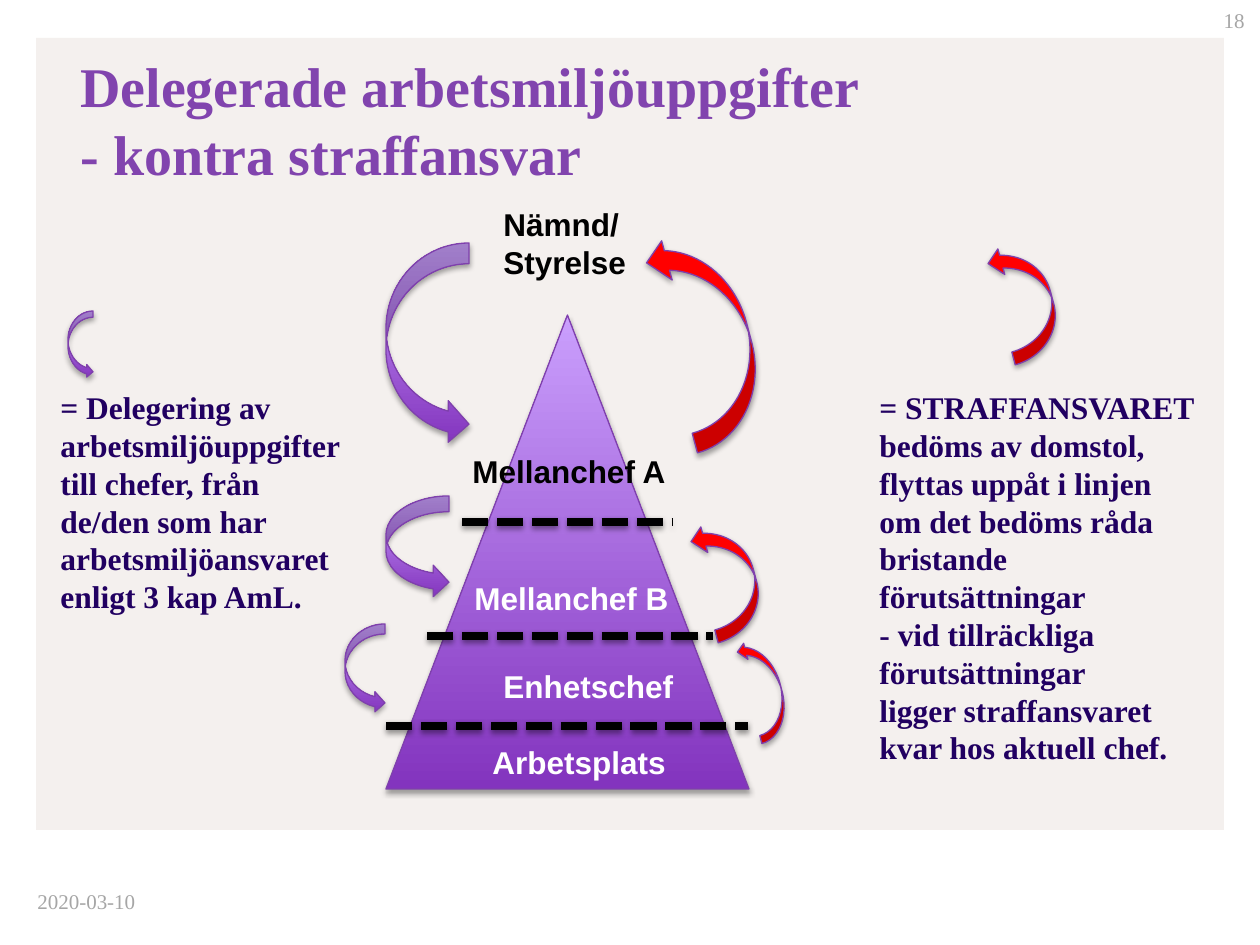
"""Build the slide on delegated work-environment tasks and criminal liability."""
from lxml.etree import SubElement
from pptx import Presentation
from pptx.dml.color import RGBColor
from pptx.enum.dml import MSO_LINE
from pptx.enum.shapes import MSO_CONNECTOR, MSO_SHAPE
from pptx.enum.text import MSO_ANCHOR, PP_ALIGN
from pptx.oxml.ns import qn
from pptx.util import Pt

SCALE = 914400 / 126
BLACK = RGBColor(0, 0, 0)
WHITE = RGBColor(255, 255, 255)
PANEL = RGBColor(0xF4, 0xF0, 0xEE)
TITLE = RGBColor(0x81, 0x44, 0xAE)
BODY = RGBColor(0x21, 0x00, 0x61)
GREY = RGBColor(0xA6, 0xA6, 0xA6)
EDGE = RGBColor(0x7F, 0x40, 0xAD)
DARK = RGBColor(0x83, 0x34, 0xBE)
LIGHT = RGBColor(0xCA, 0x9F, 0xFD)
RED = RGBColor(255, 0, 0)
SERIF, SANS = "Times New Roman", "Arial"


def px(*nums):
    return [round(num * SCALE) for num in nums]


def shade(item, alpha, dist):
    effects = SubElement(item._element.spPr, qn("a:effectLst"))
    shadow = SubElement(effects, qn("a:outerShdw"), blurRad=str(Pt(3.1)),
                        dist=str(Pt(dist)), dir="5400000", rotWithShape="0")
    color = SubElement(shadow, qn("a:srgbClr"), val="000000")
    SubElement(color, qn("a:alpha"), val=str(alpha * 1000))


deck = Presentation()
deck.slide_width, deck.slide_height = px(1260, 945)
slide = deck.slides.add_slide(deck.slide_layouts[6])
shapes = slide.shapes

panel = shapes.add_shape(MSO_SHAPE.RECTANGLE, *px(36, 38, 1188, 792))
panel.shadow.inherit = False
panel.fill.solid()
panel.fill.fore_color.rgb = PANEL
panel.line.fill.background()

RIGHT, CURVE = MSO_SHAPE.ISOSCELES_TRIANGLE, MSO_SHAPE.CURVED_RIGHT_ARROW
figures = [
    (RIGHT, (386, 315, 363, 474), False),
    (CURVE, (386, 243, 83, 202), False),
    (CURVE, (386, 496, 63, 102), False),
    (CURVE, (345, 624, 40, 89), False),
    (CURVE, (68, 311, 25, 67), False),
    (CURVE, (702, 520, 53, 118), True),
    (CURVE, (748, 638, 33, 103), True),
    (CURVE, (668, 229, 81, 217), True),
    (CURVE, (999, 242, 53, 118), True),
]
for kind, box, blame in figures:
    figure = shapes.add_shape(kind, *px(*box))
    if blame:
        figure.rotation = 165
        figure.fill.solid()
        figure.fill.fore_color.rgb = RED
    else:
        figure.fill.gradient()
        figure.fill.gradient_angle = 90
        for stop, color in zip(figure.fill.gradient_stops, (DARK, LIGHT)):
            stop.color.rgb = color
    figure.line.color.rgb = EDGE
    figure.line.width = Pt(0.75)
    shade(figure, 35, 1.8)

for left, right, top in [(386, 748, 726), (427, 713, 636), (462, 672, 522)]:
    level = shapes.add_connector(MSO_CONNECTOR.STRAIGHT, *px(left, top, right, top))
    level.line.color.rgb = BLACK
    level.line.width = Pt(5)
    level.line.dash_style = MSO_LINE.SQUARE_DOT
    shade(level, 38, 1.6)

duty = ["= Delegering av",
        "arbetsmiljöuppgifter till chefer, från de/den som har arbetsmiljöansvaret",
        "enligt 3 kap AmL."]
blame = ["= STRAFFANSVARET bedöms av domstol,",
         "flyttas uppåt i linjen",
         "om det bedöms råda bristande förutsättningar",
         "- vid tillräckliga förutsättningar",
         "ligger straffansvaret kvar hos aktuell chef."]
heading = ["Delegerade arbetsmiljöuppgifter\v- kontra straffansvar"]
top, mid = MSO_ANCHOR.TOP, MSO_ANCHOR.MIDDLE
texts = [
    (heading, (68, 66, 1161, 106), 32, SERIF, TITLE, mid),
    (blame, (867, 382, 360, 430), 18, SERIF, BODY, top),
    (duty, (48, 382, 318, 242), 18, SERIF, BODY, top),
    (["2020-03-10"], (25, 876, 294, 50), 12, SERIF, GREY, mid),
    (["18"], (1167, 1, 90, 50), 12, SERIF, GREY, top),
    (["Arbetsplats"], (480, 737, 222, 50), 18, SANS, WHITE, top),
    (["Enhetschef"], (491, 661, 222, 50), 18, SANS, WHITE, top),
    (["Mellanchef B"], (462, 573, 222, 50), 18, SANS, WHITE, top),
    (["Mellanchef A"], (460, 446, 222, 50), 18, SANS, BLACK, top),
    (["Nämnd/ Styrelse"], (491, 199, 176, 89), 18, SANS, BLACK, top),
]
for lines, box, size, face, color, anchor in texts:
    frame = shapes.add_textbox(*px(*box)).text_frame
    frame.word_wrap = True
    frame.vertical_anchor = anchor
    for num, line in enumerate(lines):
        para = frame.add_paragraph() if num else frame.paragraphs[0]
        para.text = line
        para.line_spacing = Pt(size * 1.2)
        if lines == ["18"]:
            para.alignment = PP_ALIGN.RIGHT
        for run in para.runs:
            run.font.name = face
            run.font.size = Pt(size)
            run.font.bold = color != GREY
            run.font.color.rgb = color

deck.save("out.pptx")
